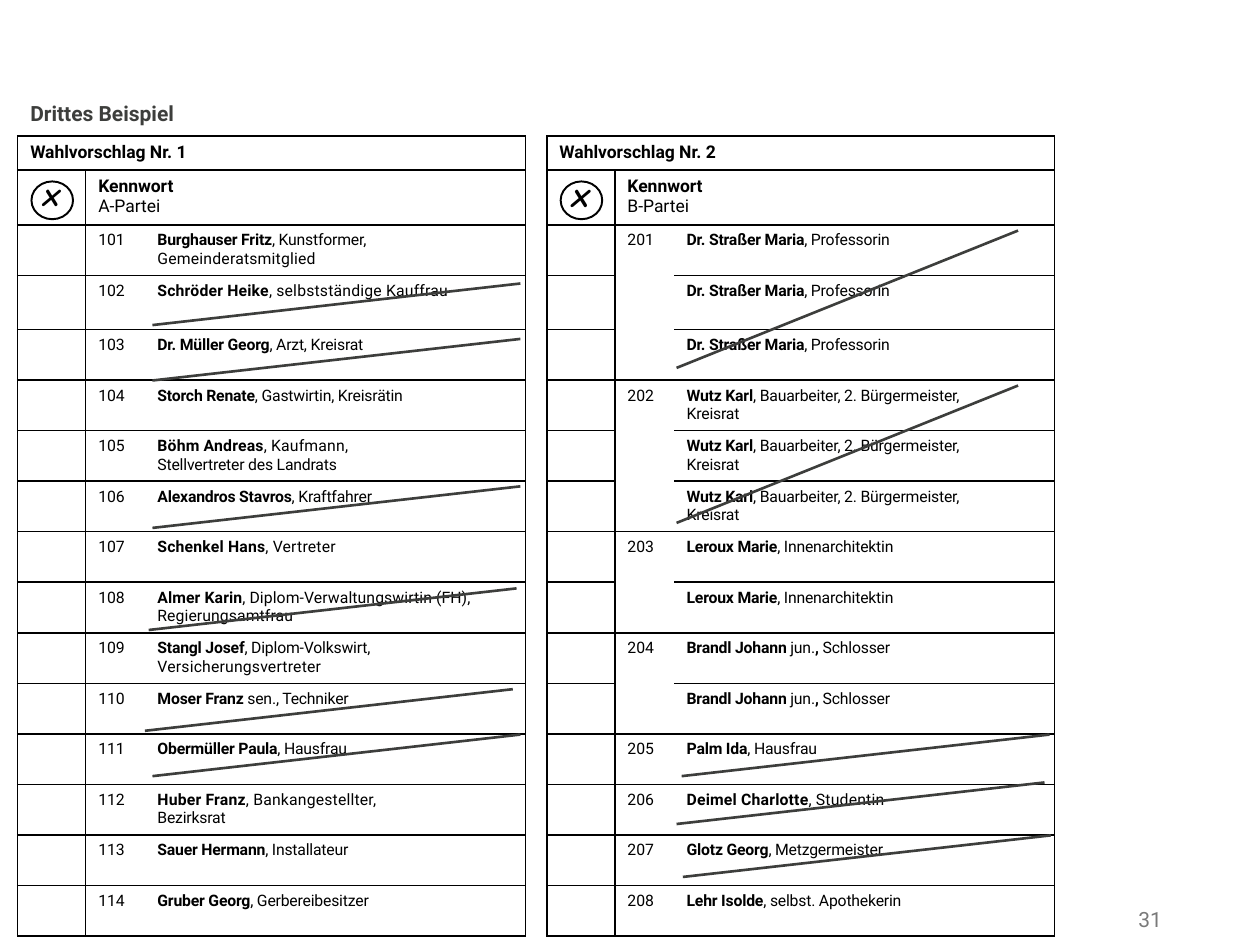
import lxml.etree
import pptx
import pptx.dml.color
import pptx.enum.shapes
import pptx.enum.text
import pptx.oxml.ns
import pptx.util

Inches, Pt = pptx.util.Inches, pptx.util.Pt
qn = pptx.oxml.ns.qn
COLORS = {"ink": "000000", "strike": "3D3E3C", "number": "797979"}
FONT, MARK_FONT = "Roboto", "Comic Neue"

TOP, COLUMNS = 1.08, [0.54, 0.47, 3.02]
HEADER, KEYWORD, BOTTOM, TALL = 0.27, 0.43, 7.43, 0.43
BODY = (BOTTOM - TOP - HEADER - KEYWORD - TALL) / 13
ROWS = [HEADER, KEYWORD, BODY, TALL] + [BODY] * 12

# Each candidate row: number, then lines as (letter spacing in points, text with *bold*).
LIST_1 = [
    ("101", (-0.1, "*Burghauser Fritz*, Kunstformer,"), (0.1, "Gemeinderatsmitglied")),
    ("102", (0.1, "*Schröder Heike*, selbstständige Kauffrau")),
    ("103", (-0.1, "*Dr. Müller Georg*, Arzt, Kreisrat")),
    ("104", (-0.1, "*Storch Renate*, Gastwirtin, Kreisrätin")),
    ("105", (0.1, "*Böhm Andreas*, Kaufmann,"), (-0.1, "Stellvertreter des Landrats")),
    ("106", (-0.1, "*Alexandros Stavros*, Kraftfahrer")),
    ("107", (0.1, "*Schenkel Hans*, Vertreter")),
    ("108", (0.05, "*Almer Karin*, Diplom-Verwaltungswirtin (FH), Regierungsamtfrau")),
    ("109", (-0.1, "*Stangl Josef*, Diplom-Volkswirt,"), (0.1, "Versicherungsvertreter")),
    ("110", (-0.1, "*Moser Franz* sen., Techniker")),
    ("111", (-0.1, "*Obermüller Paula*, Hausfrau")),
    ("112", (0.1, "*Huber Franz*, Bankangestellter,"), (-0.1, "Bezirksrat")),
    ("113", (-0.1, "*Sauer Hermann*, Installateur")),
    ("114", (-0.1, "*Gruber Georg*, Gerbereibesitzer")),
]
# Votes given to one candidate several times: number, rows, lines.
REPEATED = [
    ("201", 3, (-0.1, "*Dr. Straßer Maria*, Professorin")),
    ("202", 3, (-0.1, "*Wutz Karl*, Bauarbeiter, 2. Bürgermeister,"), (-0.1, "Kreisrat")),
    ("203", 2, (-0.1, "*Leroux Marie*, Innenarchitektin")),
    ("204", 2, (-0.1, "*Brandl Johann* jun.*,* Schlosser")),
    ("205", 1, (-0.1, "*Palm Ida*, Hausfrau")),
    ("206", 1, (0.1, "*Deimel Charlotte*, Studentin")),
    ("207", 1, (-0.1, "*Glotz Georg*, Metzgermeister")),
    ("208", 1, (-0.1, "*Lehr Isolde*, selbst. Apothekerin")),
]
LIST_2 = [(number if turn == 0 else "", *lines)
          for number, count, *lines in REPEATED for turn in range(count)]
BALLOTS = [(0.14, "1", "A-Partei", 19, LIST_1), (4.34, "2", "B-Partei", 20, LIST_2)]

# Strokes: width, rise, and the lower left ends.
STROKES = [
    (2.92, 0.33, [(1.21, 2.58), (1.21, 3.02), (1.21, 4.19), (1.18, 5), (1.15, 5.8),
                  (1.21, 6.16), (5.41, 6.16), (5.37, 6.54), (5.42, 6.96)]),
    (2.71, 1.09, [(5.37, 2.92), (5.37, 4.15)]),
]


def write(frame, lines, size, color="ink", font=FONT, align=None):
    """Fill a text frame with (letter spacing, text with *bold*) lines."""
    for index, (spacing, text) in enumerate(lines):
        para = frame.paragraphs[0] if index == 0 else frame.add_paragraph()
        para.alignment = align
        para.font.size, para.font.name = Pt(size), font
        para.font.color.rgb = pptx.dml.color.RGBColor.from_string(COLORS[color])
        for part, words in enumerate(text.split("*")):
            if words:
                span = para.add_run()
                span.text, span.font.bold = words, part % 2 == 1
                if spacing:
                    span.font._element.set("spc", str(round(spacing * 100)))
        if not text:
            end = lxml.etree.SubElement(para._p, qn("a:endParaRPr"))
            end.set("sz", str(size * 100))


def set_borders(cell, visible):
    """Draw the sides named in visible (of L, R, T, B) and clear the others."""
    properties = cell._tc.get_or_add_tcPr()
    for index, side in enumerate("LRTB"):
        line = lxml.etree.Element(qn("a:ln" + side), w=str(Pt(1)))
        if side in visible:
            fill = lxml.etree.SubElement(line, qn("a:solidFill"))
            lxml.etree.SubElement(fill, qn("a:srgbClr"), val=COLORS["ink"])
        else:
            lxml.etree.SubElement(line, qn("a:noFill"))
        properties.insert(index, line)


deck = pptx.Presentation()
deck.slide_width, deck.slide_height = Inches(10), Inches(7.5)
page = deck.slides.add_slide(deck.slide_layouts[5])
center = pptx.enum.text.PP_ALIGN.CENTER

title = page.shapes.title
title.left, title.top, title.width, title.height = map(Inches, (0.14, 0.75, 1.45, 0.3))
title.text_frame.word_wrap = False
title.text_frame.auto_size = pptx.enum.text.MSO_AUTO_SIZE.NONE
title.text_frame.vertical_anchor = pptx.enum.text.MSO_ANCHOR.MIDDLE
write(title.text_frame, [(0, "*Drittes Beispiel*")], 12, "strike",
      align=pptx.enum.text.PP_ALIGN.LEFT)

page_number = page.shapes.add_textbox(*map(Inches, (8.42, 7.17, 0.9, 0.25)))
page_number.text_frame.word_wrap = True
page_number.text_frame.vertical_anchor = pptx.enum.text.MSO_ANCHOR.MIDDLE
write(page_number.text_frame, [(0, "31")], 12, "number",
      align=pptx.enum.text.PP_ALIGN.RIGHT)

for left, ballot_number, party, mark_size, candidates in BALLOTS:
    table = page.shapes.add_table(
        len(ROWS), len(COLUMNS), Inches(left), Inches(TOP),
        Inches(sum(COLUMNS)), Inches(sum(ROWS))).table
    table.first_row = table.horz_banding = False
    for column, width in zip(table.columns, COLUMNS):
        column.width = Inches(width)
    for row, height in zip(table.rows, ROWS):
        row.height = Inches(height)
    table.cell(0, 0).merge(table.cell(0, 2))
    table.cell(1, 1).merge(table.cell(1, 2))
    for cell in table.iter_cells():
        cell.fill.background()

    write(table.cell(0, 0).text_frame, [(0, f"*Wahlvorschlag Nr. {ballot_number}*")], 10)
    write(table.cell(1, 0).text_frame, [(0, "*x*")], mark_size, font=MARK_FONT, align=center)
    table.cell(1, 0).text_frame.paragraphs[0].runs[0].font.italic = True
    write(table.cell(1, 1).text_frame, [(0, "*Kennwort*"), (0, party)], 10)
    for row in range(2):
        for column in range(3):
            set_borders(table.cell(row, column), "LRTB")

    for index, (number, *lines) in enumerate(candidates):
        vote, label, name = (table.cell(index + 2, column) for column in range(3))
        write(vote.text_frame, [(0, "")], 9)
        write(label.text_frame, [(0, number)], 9)
        write(name.text_frame, lines, 9)
        closes = index + 1 == len(candidates) or candidates[index + 1][0]
        set_borders(vote, "LRTB")
        set_borders(label, "L" + ("T" if number else "") + ("B" if closes else ""))
        set_borders(name, "RTB")

    ring = page.shapes.add_shape(
        pptx.enum.shapes.MSO_SHAPE.OVAL,
        *map(Inches, (left + 0.11, TOP + 0.36, 0.33, 0.3)))
    ring.shadow.inherit = False
    ring.fill.background()
    ring.line.color.rgb = pptx.dml.color.RGBColor.from_string(COLORS["ink"])
    ring.line.width = Pt(1.1)

for width, rise, starts in STROKES:
    for x, y in starts:
        stroke = page.shapes.add_connector(
            pptx.enum.shapes.MSO_CONNECTOR.STRAIGHT,
            *map(Inches, (x, y, x + width, y - rise)))
        stroke.line.color.rgb = pptx.dml.color.RGBColor.from_string(COLORS["strike"])
        stroke.line.width = Pt(1.5)
        lxml.etree.SubElement(stroke._element.spPr, qn("a:effectLst"))

deck.save("out.pptx")
